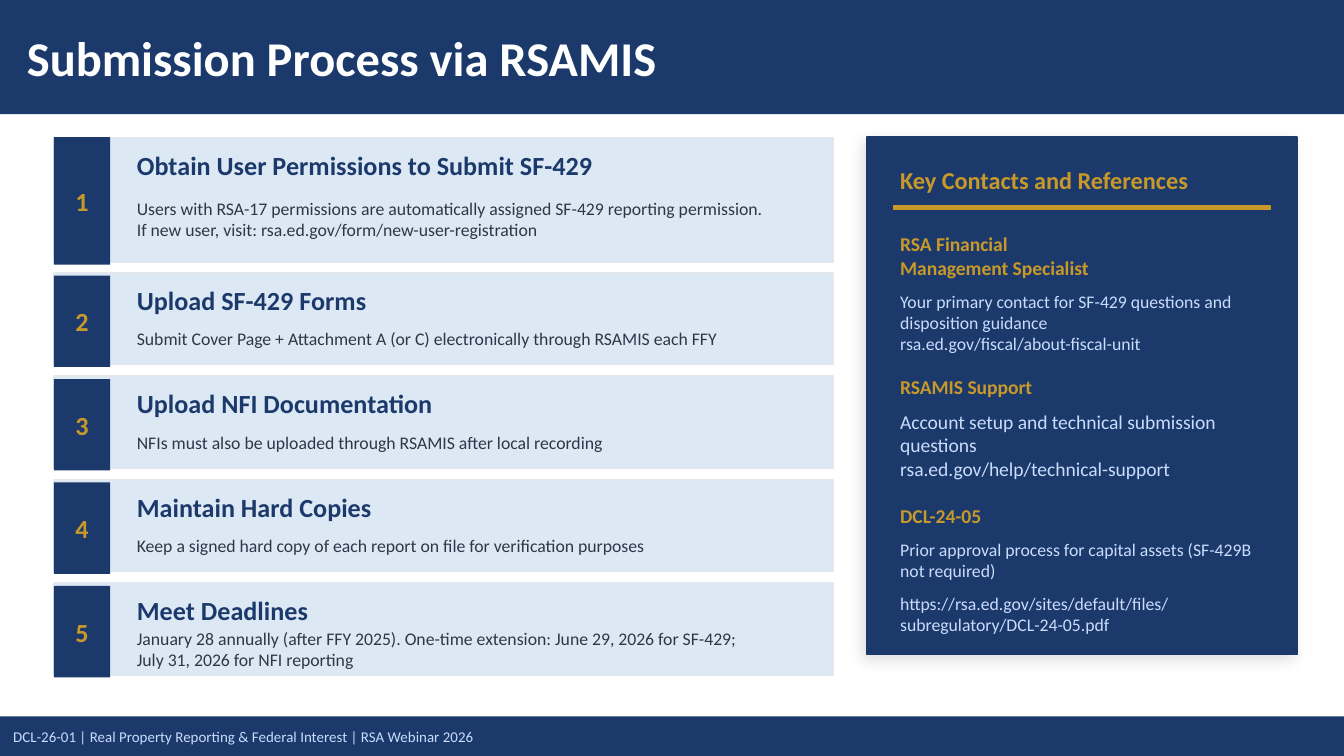
"""Builds the slide on submitting SF-429 reports via RSAMIS."""
from dataclasses import dataclass

from lxml import etree
from pptx import Presentation
from pptx.dml.color import RGBColor
from pptx.enum.shapes import MSO_SHAPE
from pptx.enum.text import MSO_ANCHOR, MSO_AUTO_SIZE, PP_ALIGN
from pptx.oxml.ns import qn
from pptx.util import Inches, Pt

RECT = MSO_SHAPE.RECTANGLE
TOP, MIDDLE = MSO_ANCHOR.TOP, MSO_ANCHOR.MIDDLE
LEFT, CENTER = PP_ALIGN.LEFT, PP_ALIGN.CENTER
NO_FIT = MSO_AUTO_SIZE.NONE
CELL = Inches(0.1)
COLS, ROWS = 100, 56.25


@dataclass(frozen=True)
class Theme:
    font: str = "Calibri"
    navy: str = "1B3A6B"
    gold: str = "C8992A"
    pale: str = "DDE8F5"
    edge: str = "E2E8F0"
    ink: str = "2D3748"
    ice: str = "CADCFC"
    white: str = "FFFFFF"
    title: float = 26
    heading: float = 14
    panel: float = 13
    contact: float = 10.5
    body: float = 9.5
    footer: float = 8


@dataclass(frozen=True)
class Box:
    col: float
    row: float
    cols: float
    rows: float

    def emu(self) -> list[int]:
        return [round(n * CELL) for n in (self.col, self.row, self.cols, self.rows)]


@dataclass(frozen=True)
class Line:
    text: str
    size: float
    color: str
    bold: bool = False
    before: float = 0


@dataclass(frozen=True)
class Step:
    title: str
    lines: tuple[str, ...]
    row: float
    rows: float = 6.8
    chip_shift: float = 0.2
    chip_rows: float = 6.8
    body_rows: float = 3.4


@dataclass(frozen=True)
class Contact:
    box: Box
    lines: tuple[Line, ...]


T = Theme()
FIRST, PITCH = 20.3, 7.7
STEPS = (
    Step("Obtain User Permissions to Submit SF-429",
         ("Users with RSA-17 permissions are automatically assigned SF-429 reporting permission.",
          "If new user, visit: rsa.ed.gov/form/new-user-registration"),
         10.3, 9.2, -0.1, 9.5, 5.6),
    Step("Upload SF-429 Forms",
         ("Submit Cover Page + Attachment A (or C) electronically through RSAMIS each FFY",),
         FIRST),
    Step("Upload NFI Documentation",
         ("NFIs must also be uploaded through RSAMIS after local recording",),
         FIRST + PITCH),
    Step("Maintain Hard Copies",
         ("Keep a signed hard copy of each report on file for verification purposes",),
         FIRST + 2 * PITCH),
    Step("Meet Deadlines",
         ("January 28 annually (after FFY 2025). One-time extension: June 29, 2026 for SF-429;\n"
          "July 31, 2026 for NFI reporting",),
         FIRST + 3 * PITCH),
)
CONTACTS = (
    Contact(Box(66, 16.8, 29, 10.8), (
        Line("RSA Financial", T.contact, T.gold, True),
        Line("Management Specialist", T.contact, T.gold, True),
        Line("Your primary contact for SF-429 questions and disposition guidance",
             T.body, T.ice, before=6),
        Line("rsa.ed.gov/fiscal/about-fiscal-unit", T.body, T.ice))),
    Contact(Box(66, 27.4, 29, 9.9), (
        Line("RSAMIS Support", T.contact, T.gold, True),
        Line("Account setup and technical submission questions\nrsa.ed.gov/help/technical-support",
             T.contact, T.ice, before=6))),
    Contact(Box(66, 37, 29, 11.5), (
        Line("DCL-24-05", T.contact, T.gold, True),
        Line("Prior approval process for capital assets (SF-429B not required)",
             T.body, T.ice, before=6),
        Line("https://rsa.ed.gov/sites/default/files/subregulatory/DCL-24-05.pdf",
             T.body, T.ice, before=6))),
)


def write(sp, lines, anchor=MIDDLE, align=LEFT) -> None:
    tf = sp.text_frame
    tf.word_wrap = True
    tf.auto_size = NO_FIT
    tf.vertical_anchor = anchor
    for i, line in enumerate(lines):
        p = tf.add_paragraph() if i else tf.paragraphs[0]
        p.text = line.text
        p.alignment = align
        if line.before:
            p.space_before = Pt(line.before)
        p.font.name = T.font
        p.font.size = Pt(line.size)
        p.font.bold = line.bold
        p.font.color.rgb = RGBColor.from_string(line.color)


def paint(sp, fill: str) -> None:
    sp.fill.solid()
    sp.fill.fore_color.rgb = RGBColor.from_string(fill)


def add_rect(s, box: Box, fill: str, edge: str = ""):
    sp = s.shapes.add_shape(RECT, *box.emu())
    sp.shadow.inherit = False
    paint(sp, fill)
    if edge:
        sp.line.color.rgb = RGBColor.from_string(edge)
        sp.line.width = Pt(1)
    else:
        sp.line.fill.background()
    return sp


def add_text(s, box: Box, lines, anchor=MIDDLE) -> None:
    write(s.shapes.add_textbox(*box.emu()), lines, anchor)


def add_shadow(sp) -> None:
    effects = sp._element.spPr.find(qn("a:effectLst"))
    shadow = etree.SubElement(effects, qn("a:outerShdw"), blurRad=str(Pt(8)),
                              dist=str(Pt(3)), dir=str(135 * 60000), rotWithShape="0")
    color = etree.SubElement(shadow, qn("a:srgbClr"), val="000000")
    etree.SubElement(color, qn("a:alpha"), val="13000")


def add_step(s, number: int, step: Step) -> None:
    add_rect(s, Box(4, step.row, 58, step.rows), T.pale, T.edge)
    chip = add_rect(s, Box(4, step.row + step.chip_shift, 4.2, step.chip_rows), T.navy)
    write(chip, [Line(str(number), T.heading, T.gold, True)], align=CENTER)
    add_text(s, Box(9.2, step.row + 0.8, 51, 2.4),
             [Line(step.title, T.heading, T.navy, True)])
    add_text(s, Box(9.2, step.row + 3.2, 51, step.body_rows),
             [Line(text, T.body, T.ink) for text in step.lines])


def add_title(s, text: str) -> None:
    sp = s.shapes.title
    sp.left, sp.top, sp.width, sp.height = Box(0, 0, COLS, 8.5).emu()
    paint(sp, T.navy)
    sp.text_frame.margin_left = Inches(0.2)
    write(sp, [Line(text, T.title, T.white, True)])


def main() -> None:
    prs = Presentation()
    prs.slide_width, prs.slide_height = round(COLS * CELL), round(ROWS * CELL)
    s = prs.slides.add_slide(prs.slide_layouts[5])
    add_title(s, "Submission Process via RSAMIS")
    footer = add_rect(s, Box(0, 53.3, COLS, ROWS - 53.3), T.navy)
    write(footer, [Line("DCL-26-01 | Real Property Reporting & Federal Interest | RSA Webinar 2026",
                        T.footer, T.ice)])
    for number, step in enumerate(STEPS, 1):
        add_step(s, number, step)
    add_shadow(add_rect(s, Box(64.5, 10.2, 32, 38.5), T.navy, T.navy))
    add_rect(s, Box(66.5, 15.3, 28, 0.3), T.gold, T.gold)
    add_text(s, Box(66, 11.5, 29, 3.8),
             [Line("Key Contacts and References", T.panel, T.gold, True)])
    for contact in CONTACTS:
        add_text(s, contact.box, contact.lines, TOP)
    prs.save("out.pptx")


if __name__ == "__main__":
    main()
